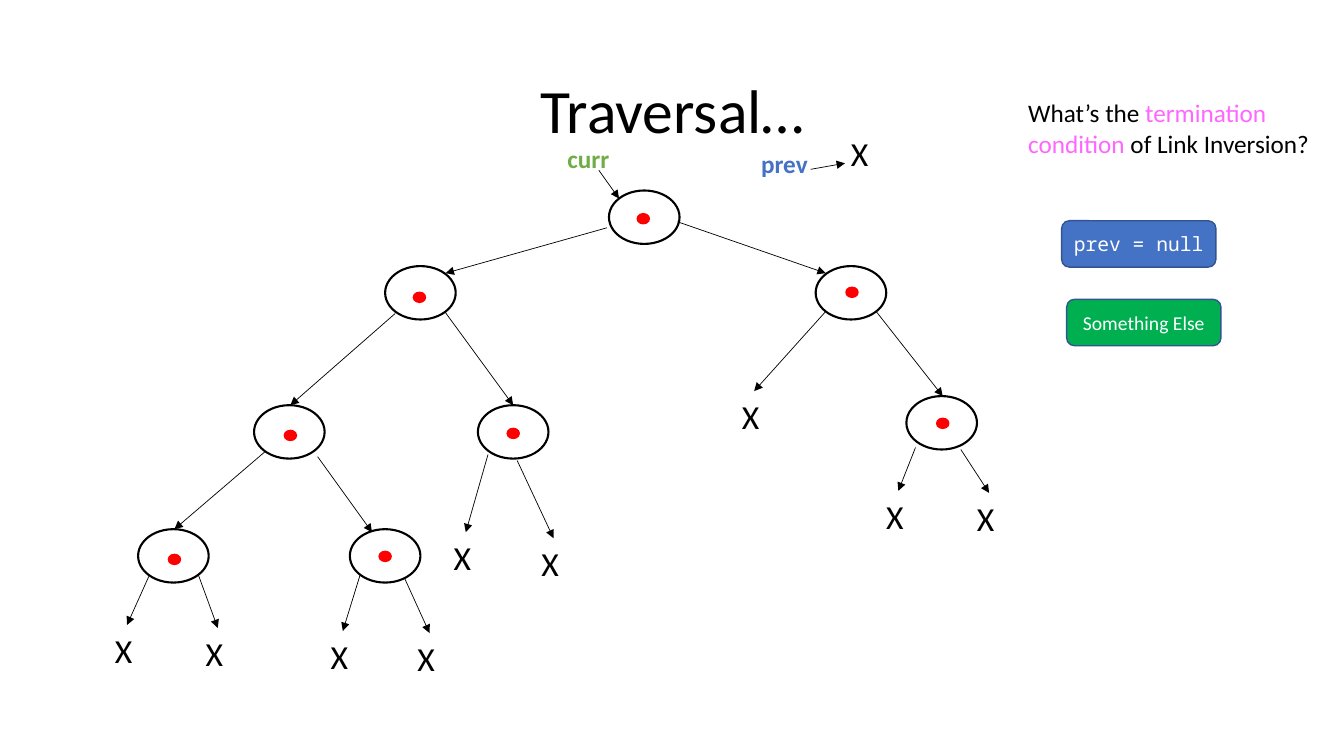
import pptx
import pptx.util
import pptx.dml.color
import pptx.enum.shapes
import pptx.enum.text
import pptx.oxml.ns
from lxml import etree

Inches = pptx.util.Inches
Pt = pptx.util.Pt
SHAPES = pptx.enum.shapes.MSO_SHAPE
ALIGN = pptx.enum.text.PP_ALIGN
ANCHOR = pptx.enum.text.MSO_ANCHOR

BLACK, WHITE, RED = "000000", "FFFFFF", "FF0000"
BLUE, GREEN, PINK = "4472C4", "70AD47", "FF66FF"

# Tree nodes: left, top of the oval, then left, top of its red dot
NODES = [
    (6.04, 1.89, 6.32, 2.12),
    (3.82, 2.64, 4.1, 2.9),
    (8.09, 2.64, 8.39, 2.85),
    (2.52, 4.02, 2.82, 4.27),
    (4.74, 4.02, 5.03, 4.25),
    (8.99, 3.93, 9.29, 4.15),
    (1.37, 5.25, 1.67, 5.5),
    (3.47, 5.25, 3.76, 5.47),
]

# Links between nodes: start x, y, end x, y
CHILD_LINKS = [
    (6.02, 2.26, 4.42, 2.71), (6.72, 2.2, 8.19, 2.71),
    (3.92, 3.11, 2.88, 4.02), (4.41, 3.09, 5.09, 4.02),
    (8.69, 3.09, 9.35, 3.93),
    (2.63, 4.48, 1.73, 5.25), (3.15, 4.53, 3.69, 5.28),
]

# Links that end in null: the X hangs centred below the arrow tip
NULL_LINKS = [
    (8.19, 3.09, 7.48, 3.88),
    (9.08, 4.44, 8.91, 4.87), (9.53, 4.46, 9.81, 4.89),
    (4.84, 4.51, 4.62, 5.28), (5.13, 4.57, 5.49, 5.34),
    (1.48, 5.71, 1.26, 6.2), (1.97, 5.71, 2.16, 6.23),
    (3.57, 5.71, 3.4, 6.26), (4.01, 5.73, 4.26, 6.28),
]

POINTER_LINKS = [(8.04, 1.68, 8.38, 1.62), (5.94, 1.69, 6.14, 1.97)]


def colour(value):
    return pptx.dml.color.RGBColor.from_string(value)


def add_span(para, text, size, text_colour, font="Calibri", bold=False):
    span = para.add_run()
    span.text = text
    span.font.name = font
    span.font.size = Pt(size)
    span.font.bold = bold
    span.font.color.rgb = colour(text_colour)


def add_label(page, left, top, width, height, spans, size, bold=False):
    box = page.shapes.add_textbox(Inches(left), Inches(top), Inches(width), Inches(height))
    box.text_frame.word_wrap = True
    for text, text_colour in spans:
        add_span(box.text_frame.paragraphs[0], text, size, text_colour, bold=bold)


def add_null(page, left, top):
    add_label(page, left, top, 0.45, 0.5, [("X", BLACK)], 24)


def add_preset(page, kind, left, top, width, height, fill, line, line_width):
    shape = page.shapes.add_shape(kind, Inches(left), Inches(top), Inches(width), Inches(height))
    shape.shadow.inherit = False
    if fill:
        shape.fill.solid()
        shape.fill.fore_color.rgb = colour(fill)
    else:
        shape.fill.background()
    shape.line.color.rgb = colour(line)
    shape.line.width = Pt(line_width)
    return shape


def add_node(page, left, top, dot_left, dot_top):
    add_preset(page, SHAPES.OVAL, left, top, 0.7, 0.53, None, BLACK, 1.5)
    add_preset(page, SHAPES.OVAL, dot_left, dot_top, 0.12, 0.1, RED, RED, 1)


def add_arrow(page, *ends):
    arrow = page.shapes.add_connector(
        pptx.enum.shapes.MSO_CONNECTOR.STRAIGHT, *[Inches(end) for end in ends])
    arrow.line.color.rgb = colour(BLACK)
    arrow.line.width = Pt(0.5)
    qn = pptx.oxml.ns.qn
    etree.SubElement(arrow.line._get_or_add_ln(), qn("a:tailEnd"), type="triangle")
    etree.SubElement(arrow._element.spPr, qn("a:effectLst"))


def add_answer(page, left, top, text, fill, font):
    button = add_preset(page, SHAPES.ROUNDED_RECTANGLE, left, top, 1.53, 0.46, fill, "325491", 1)
    button.text_frame.vertical_anchor = ANCHOR.MIDDLE
    para = button.text_frame.paragraphs[0]
    para.alignment = ALIGN.CENTER
    add_span(para, text, 14, WHITE, font)


def set_title(page, text):
    title = page.shapes.title
    title.left, title.top = Inches(0.92), Inches(0.4)
    title.width, title.height = Inches(11.5), Inches(1.45)
    title.text_frame.vertical_anchor = ANCHOR.MIDDLE
    para = title.text_frame.paragraphs[0]
    para.alignment = ALIGN.CENTER
    para.line_spacing = 0.9
    add_span(para, text, 44, BLACK)


def main():
    deck = pptx.Presentation()
    deck.slide_width, deck.slide_height = Inches(13.33), Inches(7.5)
    page = deck.slides.add_slide(deck.slide_layouts[5])
    set_title(page, "Traversal…")

    # Tree
    for node in NODES:
        add_node(page, *node)
    for link in CHILD_LINKS + NULL_LINKS + POINTER_LINKS:
        add_arrow(page, *link)
    for _, _, tip_x, tip_y in NULL_LINKS:
        add_null(page, tip_x - 0.22, tip_y)

    # Pointers
    add_label(page, 5.53, 1.37, 0.7, 0.4, [("curr", GREEN)], 18, bold=True)
    add_label(page, 7.45, 1.42, 0.76, 0.4, [("prev", BLUE)], 18, bold=True)
    add_null(page, 8.34, 1.27)

    # Question and answers
    question = [("What’s the", BLACK), (" termination condition", PINK),
                (" of Link Inversion?", BLACK)]
    add_label(page, 10.1, 0.92, 3.1, 0.71, question, 18)
    add_answer(page, 10.53, 2.19, "prev = null", BLUE, "Noto Sans Mono")
    add_answer(page, 10.58, 2.97, "Something Else", "00B050", "Calibri")

    deck.save("out.pptx")


if __name__ == "__main__":
    main()
